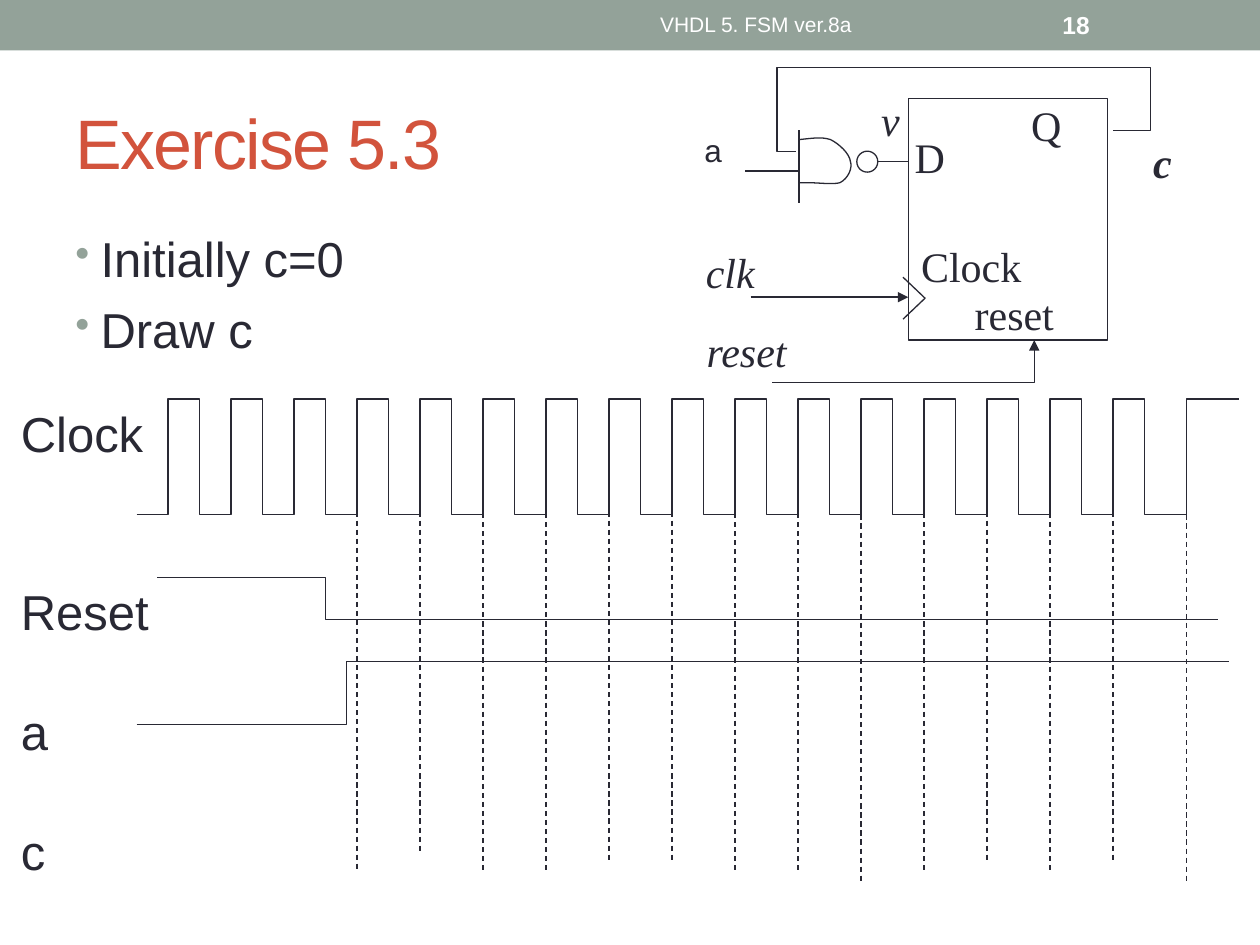
"""Build the Exercise 5.3 slide: a flip-flop circuit above its timing diagram."""
from dataclasses import dataclass

from lxml import etree
from pptx import Presentation
from pptx.dml.color import RGBColor
from pptx.enum.dml import MSO_LINE
from pptx.enum.shapes import MSO_CONNECTOR, MSO_SHAPE
from pptx.enum.text import MSO_ANCHOR, PP_ALIGN
from pptx.oxml.ns import qn
from pptx.util import Inches, Pt

STRAIGHT = MSO_CONNECTOR.STRAIGHT
RECTANGLE, OVAL = MSO_SHAPE.RECTANGLE, MSO_SHAPE.OVAL
DASH = MSO_LINE.DASH
TOP, MIDDLE = MSO_ANCHOR.TOP, MSO_ANCHOR.MIDDLE
LEFT, CENTER = PP_ALIGN.LEFT, PP_ALIGN.CENTER

INK, SAGE, RUST, WHITE = "292934", "93A299", "D2533C", "FFFFFF"
SANS, SERIF = "Arial", "Times New Roman"
COLUMNS, ROWS = 120, 90
CELL = Inches(10) / COLUMNS

CLOCK_START, CLOCK_PERIOD, CLOCK_PULSES = 13, 6, 16
CLOCK_HIGH, CLOCK_LOW, CLOCK_END = 38, 49, 118
LAST_EDGE = 113
GUIDE_START = 34
GUIDE_SPANS = [(47, 83), (47, 81), (48, 83), (48, 83), (47, 82), (47, 82), (48, 83),
               (48, 83), (49, 84), (48, 83), (47, 82), (48, 83), (47, 82), (49, 84)]

Point = tuple[float, float]


@dataclass
class Label:
    """A circuit label placed in grid cells."""
    text: str
    left: float
    top: float
    width: float
    italic: bool = False
    bold: bool = False


@dataclass
class Wire:
    """An outline through grid points, with an optional arrowhead."""
    points: list[Point]
    arrow: str = ""


LABELS = [
    Label("c", 108.6, 12.4, 4.2, italic=True, bold=True),
    Label("clk", 66, 22.9, 7.1, italic=True),
    Label("reset", 66, 30.4, 10.2, italic=True),
    Label("D", 85.9, 11.9, 5.3),
    Label("Q", 97, 8.9, 5.3),
    Label("Clock", 86.5, 22.3, 12),
    Label("reset", 91.6, 26.9, 10),
    Label("v", 82.7, 8.4, 4.2, italic=True),
]
STRAIGHT_WIRES = [
    Wire([(76.1, 12.4), (76.1, 19.3)]),
    Wire([(83.6, 15.4), (86.5, 15.4)]),
    Wire([(71, 16.3), (76.1, 16.3)]),
    Wire([(71.5, 28.3), (86.5, 28.3)], "tailEnd"),
]
BENT_WIRES = [
    Wire([(75.8, 14.4), (74, 14.4), (74, 6.4), (109.6, 6.4), (109.6, 12.4), (106, 12.4)]),
    Wire([(98.5, 32.4), (98.5, 36.4), (73.5, 36.4)], "headEnd"),
    Wire([(86, 26.4), (88.1, 28.4), (86, 30.4)]),
]
SIGNALS = [
    Wire([(15, 55), (31, 55), (31, 59), (116, 59)]),
    Wire([(13, 69), (33, 69), (33, 63), (117, 63)]),
]
GATE_START = (76.1, 13.3)
GATE_CURVES = [
    [(77.2, 13.2), (78.2, 13), (79.1, 13.3)],
    [(79.9, 13.7), (80.9, 14.6), (81, 15.4)],
    [(81.2, 16), (80.8, 17), (80, 17.4)],
    [(79.4, 17.6), (77.8, 17.4), (77, 17.4)],
    [(76.4, 17.4), (76.2, 17.4), (76.1, 17.4)],
]


def cells(*lengths: float) -> list[int]:
    """Convert grid cells to slide units."""
    return [round(length * CELL) for length in lengths]


def paint(target, color: str) -> None:
    """Give a fill or a line format a solid colour."""
    fill = getattr(target, "fill", target)
    fill.solid()
    fill.fore_color.rgb = RGBColor.from_string(color)


def stroke(shape, arrow: str = "") -> None:
    """Draw the thin ink outline, with an arrowhead at the named end."""
    paint(shape.line, INK)
    shape.line.width = Pt(0.75)
    if arrow:
        etree.SubElement(shape.line._get_or_add_ln(), qn("a:" + arrow), type="triangle")


def add_line(slide, wire: Wire, dash=None) -> None:
    """Draw a straight connector between two grid points."""
    start, end = wire.points
    line = slide.shapes.add_connector(STRAIGHT, *cells(*start, *end))
    stroke(line)
    if dash:
        line.line.dash_style = dash
    if wire.arrow:
        stroke(line, wire.arrow)
    etree.SubElement(line._element.spPr, qn("a:effectLst"))


def add_outline(slide, wire: Wire) -> None:
    """Draw an open, unfilled outline through grid points."""
    start, *rest = [cells(*point) for point in wire.points]
    builder = slide.shapes.build_freeform(*start, scale=1.0)
    builder.add_line_segments(rest, close=False)
    outline = builder.convert_to_shape()
    outline.shadow.inherit = False
    outline.fill.background()
    stroke(outline, wire.arrow)


def add_block(slide, kind, box: tuple, fill: str = "") -> None:
    """Draw a preset shape, either filled or outlined."""
    block = slide.shapes.add_shape(kind, *cells(*box))
    block.shadow.inherit = False
    if fill:
        paint(block.fill, fill)
        block.line.fill.background()
    else:
        block.fill.background()
        stroke(block)


def add_bullet(paragraph) -> None:
    """Give a paragraph a sage bullet with a hanging indent."""
    props = paragraph._p.get_or_add_pPr()
    props.set("marL", str(Inches(0.2)))
    props.set("indent", str(-Inches(0.2)))
    color = etree.SubElement(props, qn("a:buClr"))
    etree.SubElement(color, qn("a:srgbClr"), val=SAGE)
    etree.SubElement(props, qn("a:buSzPct"), val="85000")
    etree.SubElement(props, qn("a:buChar"), char="•")


def add_text(slide, text: str, box: tuple, *, size: float, color: str = INK, font: str = SANS,
             bold: bool = False, italic: bool = False, align=LEFT, anchor=TOP, wrap: bool = True,
             gaps: tuple = (), bullets: bool = False, spacing: float = 0) -> None:
    """Write one paragraph per line of text, with optional gaps before them."""
    frame = slide.shapes.add_textbox(*cells(*box)).text_frame
    frame.word_wrap = wrap
    frame.vertical_anchor = anchor
    for index, words in enumerate(text.split("\n")):
        paragraph = frame.add_paragraph() if index else frame.paragraphs[0]
        paragraph.alignment = align
        if gaps:
            paragraph.space_before = Pt(gaps[index])
        if bullets:
            add_bullet(paragraph)
        run = paragraph.add_run()
        run.text = words
        run.font.name, run.font.size = font, Pt(size)
        run.font.bold, run.font.italic = bold, italic
        paint(run.font, color)
        if spacing:
            run._r.get_or_add_rPr().set("spc", str(round(spacing * 100)))


def clock_wave() -> Wire:
    """Trace the square wave, whose last rising edge comes late."""
    points = [(CLOCK_START, CLOCK_LOW)]
    for pulse in range(CLOCK_PULSES):
        rise = CLOCK_START + CLOCK_PERIOD * (pulse + 0.5)
        fall = rise + CLOCK_PERIOD / 2
        points += [(rise, CLOCK_LOW), (rise, CLOCK_HIGH), (fall, CLOCK_HIGH), (fall, CLOCK_LOW)]
    points += [(LAST_EDGE, CLOCK_LOW), (LAST_EDGE, CLOCK_HIGH), (CLOCK_END, CLOCK_HIGH)]
    return Wire(points)


def gate_outline(steps: int = 8) -> Wire:
    """Trace the rounded gate body along its cubic curves."""
    points = [GATE_START]
    for curve in GATE_CURVES:
        corners = [points[-1], *curve]
        for step in range(1, steps + 1):
            t = step / steps
            weights = ((1 - t) ** 3, 3 * t * (1 - t) ** 2, 3 * t * t * (1 - t), t ** 3)
            points.append(tuple(sum(w * corner[axis] for w, corner in zip(weights, corners))
                                for axis in (0, 1)))
    return Wire(points)


def main() -> None:
    """Assemble and save the slide."""
    deck = Presentation()
    deck.slide_width, deck.slide_height = cells(COLUMNS, ROWS)
    slide = deck.slides.add_slide(deck.slide_layouts[6])

    add_block(slide, RECTANGLE, (0, 0, COLUMNS, 4.8), SAGE)
    add_text(slide, "Exercise 5.3", (6, 7, 108, 13), size=40, color=RUST, anchor=MIDDLE, spacing=-1)
    add_text(slide, "Initially c=0\nDraw c", (6, 21.2, 108, 63.8), size=28, gaps=(0, 7), bullets=True)
    add_text(slide, "VHDL 5. FSM ver.8a", (45, 0.2, 54, 4.3), size=12, color=WHITE,
             align=CENTER, anchor=MIDDLE)
    add_text(slide, "18", (100, 0.2, 14, 4.3), size=14, color=WHITE, bold=True, anchor=MIDDLE)
    add_text(slide, "Clock\nReset\na\nc", (0.8, 37.8, 16.2, 47), size=28, gaps=(0, 68.5, 35, 35))

    for index, (top, bottom) in enumerate(GUIDE_SPANS):
        column = min(GUIDE_START + CLOCK_PERIOD * index, LAST_EDGE)
        if index == len(GUIDE_SPANS) - 1:
            column = LAST_EDGE
        add_line(slide, Wire([(column, top), (column, bottom)]), DASH)
    add_block(slide, RECTANGLE, (86.5, 9.4, 19, 23))
    add_block(slide, OVAL, (81.6, 14.4, 2, 2))
    for wire in STRAIGHT_WIRES:
        add_line(slide, wire)
    for wire in [clock_wave(), *SIGNALS, *BENT_WIRES, gate_outline()]:
        add_outline(slide, wire)
    for label in LABELS:
        add_text(slide, label.text, (label.left, label.top, label.width, 6), size=24, font=SERIF,
                 bold=label.bold, italic=label.italic, align=CENTER, wrap=False)
    add_text(slide, "a", (65.9, 11.9, 4.1, 4.8), size=18, wrap=False)
    deck.save("out.pptx")


if __name__ == "__main__":
    main()
